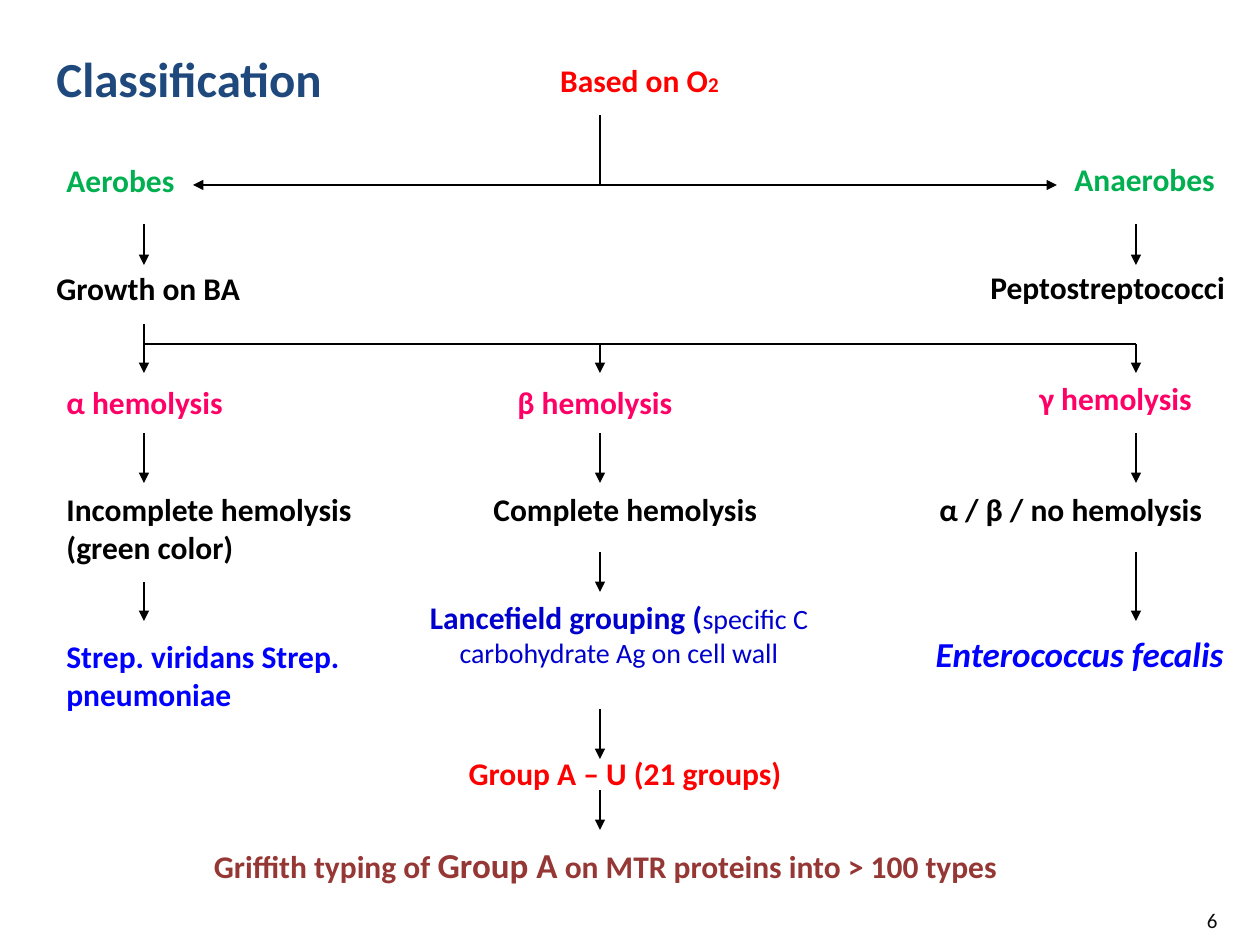
from lxml import etree
from pptx import Presentation
from pptx.dml.color import RGBColor
from pptx.enum.shapes import MSO_CONNECTOR
from pptx.enum.text import MSO_ANCHOR, PP_ALIGN
from pptx.oxml.ns import qn
from pptx.util import Emu, Pt

STRAIGHT = MSO_CONNECTOR.STRAIGHT
TOP, MIDDLE, BOTTOM = MSO_ANCHOR.TOP, MSO_ANCHOR.MIDDLE, MSO_ANCHOR.BOTTOM
LEFT, CENTER, RIGHT = PP_ALIGN.LEFT, PP_ALIGN.CENTER, PP_ALIGN.RIGHT

PX_PER_INCH = 126
FONT = "Calibri"
COLORS = {
    "title": "1F497D",
    "red": "FF0000",
    "oxygen": "00B050",
    "black": "000000",
    "hemolysis": "FF0066",
    "species": "0000FF",
    "lancefield": "0000CC",
    "griffith": "953735",
    "number": "0D0D0D",
}
AEROBE_X, BETA_X, ANAEROBE_X = 144, 600, 1136
OXYGEN_Y, HEMOLYSIS_Y = 185, 344


def px(length):
    """Turn whole pixels into EMU."""
    return Emu(round(length * 914400 / PX_PER_INCH))


def add_text(slide, box, *runs, color="black", size=18, bold=True, italic=False,
             align=LEFT, anchor=TOP, spacing=None):
    """Add a label; a run is a string or a (string, size, bold) tuple."""
    label = slide.shapes.add_textbox(*map(px, box))
    frame = label.text_frame
    frame.word_wrap = True
    frame.vertical_anchor = anchor
    paragraph = frame.paragraphs[0]
    paragraph.alignment = align
    if spacing:
        paragraph.line_spacing = spacing
    for part in runs:
        words, run_size, run_bold = (part, size, bold) if isinstance(part, str) else part
        run = paragraph.add_run()
        run.text = words
        run.font.name = FONT
        run.font.size = Pt(run_size)
        run.font.bold = run_bold
        run.font.italic = italic
        run.font.color.rgb = RGBColor.from_string(COLORS[color])


def add_line(slide, x1, y1, x2, y2, arrow=True):
    """Add a thin black line, with an arrowhead at its end by default."""
    line = slide.shapes.add_connector(STRAIGHT, *map(px, (x1, y1, x2, y2)))
    line.line.color.rgb = RGBColor.from_string(COLORS["black"])
    line.line.width = Pt(0.75)
    if arrow:
        etree.SubElement(line.line._get_or_add_ln(), qn("a:tailEnd"), type="triangle")
    etree.SubElement(line._element.spPr, qn("a:effectLst"))


def add_oxygen_level(slide):
    """Add the title and the split into aerobes and anaerobes."""
    add_text(slide, (44, 45, 407, 69), "Classification", color="title", size=28,
             anchor=BOTTOM, spacing=0.9)
    add_text(slide, (491, 55, 297, 50), "Based on O", ("2", 12, True),
             color="red", align=CENTER)
    add_text(slide, (54, 155, 198, 50), "Aerobes", color="oxygen")
    add_text(slide, (1062, 154, 184, 50), "Anaerobes", color="oxygen")
    add_text(slide, (978, 262, 267, 50), "Peptostreptococci")
    add_text(slide, (44, 263, 258, 50), "Growth on BA")


def add_hemolysis_level(slide):
    """Add the three kinds of hemolysis and their descriptions."""
    add_text(slide, (54, 377, 228, 50), "α hemolysis", color="hemolysis")
    add_text(slide, (481, 377, 228, 50), "β hemolysis", color="hemolysis", align=CENTER)
    add_text(slide, (1027, 373, 208, 50), "γ hemolysis", color="hemolysis")
    add_text(slide, (54, 484, 377, 88), "Incomplete hemolysis (green color)")
    add_text(slide, (481, 484, 397, 50), "Complete hemolysis")
    add_text(slide, (927, 484, 307, 50), "α / β / no hemolysis")


def add_group_level(slide):
    """Add the species, the grouping and typing steps, and the slide number."""
    add_text(slide, (54, 631, 367, 89), "Strep. viridans Strep. pneumoniae", color="species")
    add_text(slide, (888, 626, 348, 97), "Enterococcus fecalis", color="species",
             size=20, italic=True, align=RIGHT)
    add_text(slide, (393, 592, 452, 89), "Lancefield grouping (",
             ("specific C carbohydrate Ag on cell wall", 16, False),
             color="lancefield", align=CENTER)
    add_text(slide, (433, 748, 384, 50), "Group A – U (21 groups)", color="red", align=CENTER)
    add_text(slide, (186, 837, 839, 54), "Griffith typing of ", ("Group A", 20, True),
             " on MTR proteins into > 100 types", color="griffith", align=CENTER)
    add_text(slide, (1191, 896, 39, 49), "6", color="number", size=12, bold=False,
             align=RIGHT, anchor=MIDDLE)


def add_branches(slide):
    """Add the lines that fork, then the arrows down each column."""
    add_line(slide, BETA_X, 115, BETA_X, OXYGEN_Y, arrow=False)
    add_line(slide, 282, OXYGEN_Y, 997, OXYGEN_Y, arrow=False)
    add_line(slide, 997, OXYGEN_Y, 1057, OXYGEN_Y)
    add_line(slide, 282, OXYGEN_Y, 193, OXYGEN_Y)
    add_line(slide, AEROBE_X, HEMOLYSIS_Y, ANAEROBE_X, HEMOLYSIS_Y, arrow=False)
    arrows = {
        AEROBE_X: [(224, 265), (324, 373), (433, 483), (582, 621)],
        BETA_X: [(HEMOLYSIS_Y, 373), (433, 483), (552, 592), (709, 759), (790, 830)],
        ANAEROBE_X: [(224, 265), (HEMOLYSIS_Y, 373), (433, 483), (552, 621)],
    }
    for column, spans in arrows.items():
        for start, end in spans:
            add_line(slide, column, start, column, end)


def main():
    """Build the classification slide and save it."""
    deck = Presentation()
    deck.slide_width, deck.slide_height = px(1260), px(945)
    slide = deck.slides.add_slide(deck.slide_layouts[6])
    add_oxygen_level(slide)
    add_hemolysis_level(slide)
    add_group_level(slide)
    add_branches(slide)
    deck.save("out.pptx")


if __name__ == "__main__":
    main()
